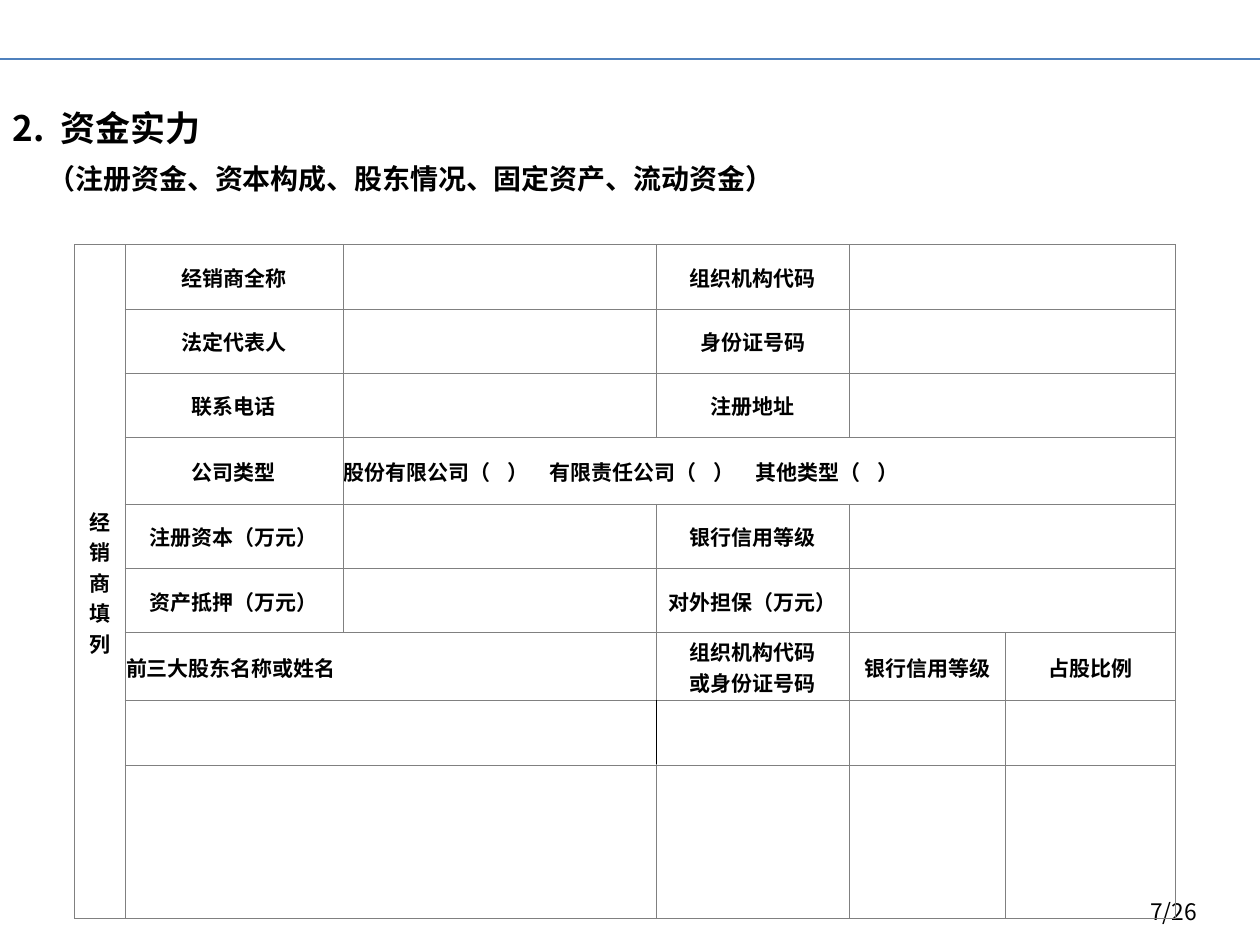
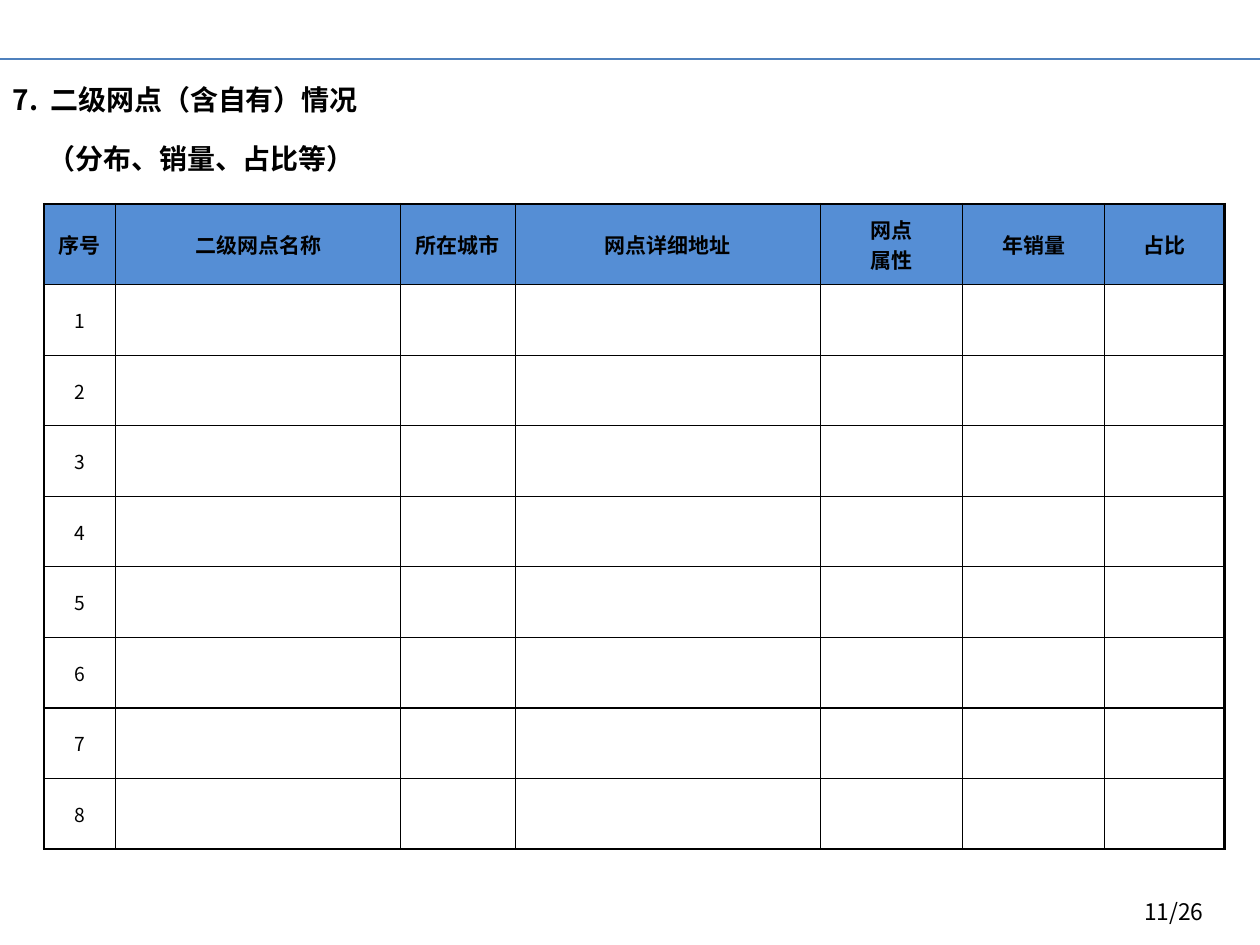
from lxml import etree
from pptx import Presentation
from pptx import util as u
from pptx.dml.color import RGBColor
from pptx.enum import shapes, text
from pptx.oxml.ns import qn

COLORS = {
    "rule": "4F81BD",
    "text": "000000",
    "grid": "808080",
    "header": "558ED5",
    "border": "000000",
}
FONT = "Noto Sans CJK SC"
TITLE_ONLY = 5
TOTAL_PAGES = 26
SIDES = {"left": "a:lnL", "right": "a:lnR", "top": "a:lnT", "bottom": "a:lnB"}


def rgb(name):
    return RGBColor.from_string(COLORS[name])


def add_run(paragraph, content, size, bold, spacing=0):
    run = paragraph.add_run()
    run.text = content
    run.font.size = u.Pt(size)
    run.font.bold = bold
    run.font.name = FONT
    run.font.color.rgb = rgb("text")
    properties = run.font._element
    etree.SubElement(properties, qn("a:ea"), typeface=FONT)
    if spacing:
        properties.set("spc", str(round(spacing * 100)))


def write_text(frame, content, size, bold=False, align=text.PP_ALIGN.LEFT, space_width=0):
    for index, paragraph_text in enumerate(content.split("\n")):
        paragraph = frame.add_paragraph() if index else frame.paragraphs[0]
        paragraph.alignment = align
        for line_index, line in enumerate(paragraph_text.split("\v")):
            if line_index:
                paragraph.add_line_break()
            for word_index, word in enumerate(line.split(" ")):
                if word_index:
                    add_run(paragraph, " ", size, bold, space_width)
                add_run(paragraph, word, size, bold)


def place_text(shape, box, content, size, **style):
    shape.left, shape.top, shape.width, shape.height = map(u.Inches, box)
    frame = shape.text_frame
    frame.word_wrap = True
    frame.auto_size = text.MSO_AUTO_SIZE.NONE
    frame.vertical_anchor = text.MSO_ANCHOR.MIDDLE
    frame.margin_left = frame.margin_right = u.Inches(0.1)
    frame.margin_top = frame.margin_bottom = 0
    write_text(frame, content, size, **style)


def add_text(slide, box, content, size, **style):
    shape = slide.shapes.add_textbox(*map(u.Inches, box))
    place_text(shape, box, content, size, **style)


def add_framed_slide(presentation, page, title, title_size, title_box, subtitle, subtitle_top):
    slide = presentation.slides.add_slide(presentation.slide_layouts[TITLE_ONLY])
    rule_y = u.Inches(0.47)
    rule = slide.shapes.add_connector(
        shapes.MSO_CONNECTOR.STRAIGHT, 0, rule_y, presentation.slide_width, rule_y
    )
    rule.line.color.rgb = rgb("rule")
    rule.line.width = u.Pt(1.5)
    etree.SubElement(rule._element.spPr, qn("a:effectLst"))
    place_text(
        slide.shapes.title, title_box, title, title_size,
        bold=True, space_width=title_size * 0.22,
    )
    add_text(slide, (0.28, subtitle_top, 6.85, 0.37), subtitle, 16, bold=True)
    add_text(
        slide, (8.67, 7.03, 1.29, 0.4), f"{page}/{TOTAL_PAGES}", 13,
        align=text.PP_ALIGN.CENTER,
    )
    return slide


def set_border(cell, side, color, width):
    properties = cell._tc.get_or_add_tcPr()
    line = etree.SubElement(properties, qn(SIDES[side]), w=str(u.Pt(width)))
    fill = etree.SubElement(line, qn("a:solidFill"))
    etree.SubElement(fill, qn("a:srgbClr"), val=COLORS[color])


def add_grid(slide, left, top, column_widths, row_heights):
    frame = slide.shapes.add_table(
        len(row_heights), len(column_widths), u.Inches(left), u.Inches(top),
        u.Inches(sum(column_widths)), u.Inches(sum(row_heights)),
    )
    table = frame.table
    table.first_row = table.horz_banding = False
    for column, width in zip(table.columns, column_widths):
        column.width = u.Inches(width)
    for row, height in zip(table.rows, row_heights):
        row.height = u.Inches(height)
    return table


def add_capital_form(slide, left, top):
    column_widths = [0.4, 1.73, 2.49, 1.53, 1.24, 1.35]
    row_heights = [0.51, 0.51, 0.51, 0.53, 0.51, 0.51, 0.54, 0.51, 0.51]
    table = add_grid(slide, left, top, column_widths, row_heights)
    field_pairs = {
        0: ("经销商全称", "组织机构代码"),
        1: ("法定代表人", "身份证号码"),
        2: ("联系电话", "注册地址"),
        4: ("注册资本（万元）", "银行信用等级"),
        5: ("资产抵押（万元）", "对外担保（万元）"),
    }
    centered = {
        (0, 0): "\v".join("经销商填列"),
        (3, 1): "公司类型",
        (6, 3): "组织机构代码\v或身份证号码",
        (6, 4): "银行信用等级",
        (6, 5): "占股比例",
    }
    for row, (first, second) in field_pairs.items():
        centered[row, 1] = first
        centered[row, 3] = second
    left_aligned = {
        (3, 2): "股份有限公司（ ）\u3000有限责任公司（ ）\u3000其他类型（ ）".replace("\u3000", "　"),
        (6, 1): "前三大股东名称或姓名",
    }
    spans = [((0, 0), (8, 0)), ((3, 2), (3, 5))]
    spans += [((row, 4), (row, 5)) for row in field_pairs]
    spans += [((row, 1), (row, 2)) for row in (6, 7, 8)]
    for start, end in spans:
        table.cell(*start).merge(table.cell(*end))

    dark_edges = {(7, 1, "right"), (7, 2, "right"), (7, 3, "left")}
    for row in range(len(row_heights)):
        for column in range(len(column_widths)):
            cell = table.cell(row, column)
            for side in SIDES:
                if (row, column, side) in dark_edges:
                    set_border(cell, side, "border", 1)
                else:
                    set_border(cell, side, "grid", 0.25)
            cell.fill.background()
            cell.vertical_anchor = text.MSO_ANCHOR.MIDDLE
            cell.margin_left = cell.margin_right = cell.margin_top = u.Inches(0.01)
            cell.margin_bottom = 0
    for position, label in centered.items():
        write_text(
            table.cell(*position).text_frame, label, 12,
            bold=True, align=text.PP_ALIGN.CENTER,
        )
    for position, label in left_aligned.items():
        write_text(table.cell(*position).text_frame, label, 12, bold=True, space_width=7)


def add_outlet_table(slide, left, top):
    headers = [
        "序号", "二级网点名称", "所在城市", "网点详细地址", "网点\n属性", "年销量", "占比",
    ]
    column_widths = [0.57, 2.26, 0.91, 2.42, 1.13, 1.13, 0.95]
    outlet_count = 8
    table = add_grid(slide, left, top, column_widths, [0.64] + [0.56] * outlet_count)
    last_column = len(headers) - 1
    for row in range(outlet_count + 1):
        for column, header in enumerate(headers):
            cell = table.cell(row, column)
            outer = {
                "left": column == 0,
                "right": column == last_column,
                "top": row == 0,
                "bottom": row == outlet_count,
            }
            for side, is_outer in outer.items():
                set_border(cell, side, "border", 1.5 if is_outer else 0.75)
            cell.vertical_anchor = text.MSO_ANCHOR.MIDDLE
            if row == 0:
                cell.fill.solid()
                cell.fill.fore_color.rgb = rgb("header")
                write_text(
                    cell.text_frame, header, 12, bold=True, align=text.PP_ALIGN.CENTER
                )
            else:
                cell.fill.background()
                if column == 0:
                    write_text(cell.text_frame, str(row), 11, align=text.PP_ALIGN.CENTER)


def main():
    presentation = Presentation()
    presentation.slide_width = u.Inches(10)
    presentation.slide_height = u.Inches(7.5)

    capital_slide = add_framed_slide(
        presentation, 7, "2. 资金实力", 20, (0, 0.79, 10, 0.44),
        "（注册资金、资本构成、股东情况、固定资产、流动资金）", 1.23,
    )
    add_capital_form(capital_slide, 0.59, 1.94)

    outlet_slide = add_framed_slide(
        presentation, 11, "7. 二级网点（含自有）情况", 16, (0, 0.6, 10, 0.37),
        "（分布、销量、占比等）", 1.07,
    )
    add_outlet_table(outlet_slide, 0.35, 1.62)

    presentation.save("out.pptx")


if __name__ == "__main__":
    main()
